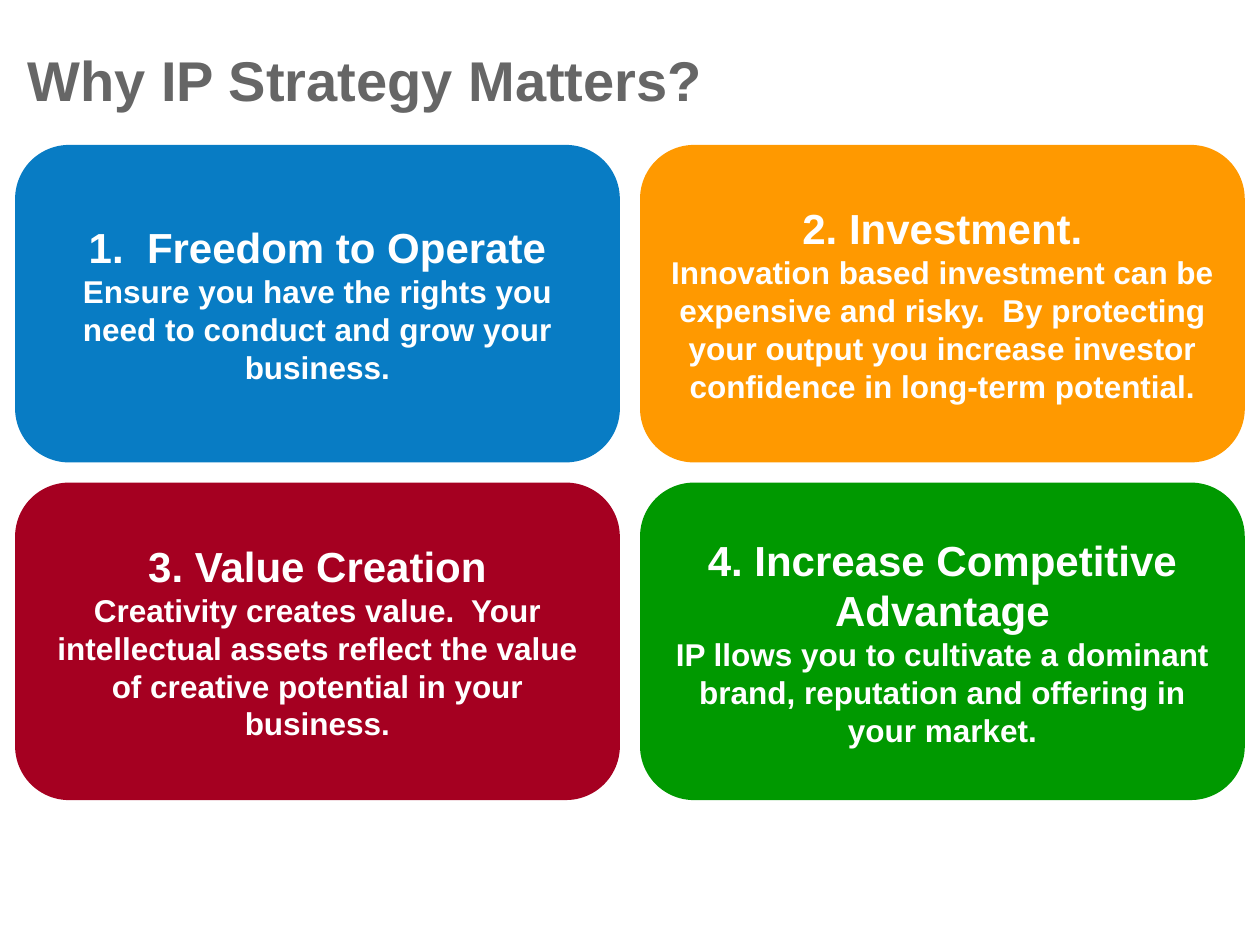
from dataclasses import dataclass

from pptx import Presentation
from pptx.dml.color import RGBColor
from pptx.enum import shapes, text
from pptx.util import Pt


@dataclass(frozen=True)
class Theme:
    face: str = "Arial"
    grey: str = "666666"
    white: str = "FFFFFF"
    blue: str = "087CC4"
    amber: str = "FF9900"
    red: str = "A50021"
    green: str = "009900"
    title: int = 32
    head: int = 24
    body: int = 18


THEME = Theme()
LEFT, TOP, WIDE, HIGH, GAP = 8.64, 82.8, 345.6, 181.44, 11.52

CARDS = [
    (THEME.blue, "1.  Freedom to Operate",
     "Ensure you have the rights you need to conduct and grow your business."),
    (THEME.amber, "2. Investment.",
     "Innovation based investment can be expensive and risky.  By protecting "
     "your output you increase investor confidence in long-term potential."),
    (THEME.red, "3. Value Creation",
     "Creativity creates value.  Your intellectual assets reflect the value "
     "of creative potential in your business."),
    (THEME.green, "4. Increase Competitive Advantage",
     "IP llows you to cultivate a dominant brand, reputation and offering in "
     "your market."),
]


def put(item, values):
    for name, value in values.items():
        setattr(item, name, value)


def write(para, words, size, color, align):
    para.alignment = align
    run = para.add_run()
    run.text = words
    put(run.font, {"name": THEME.face, "size": Pt(size), "bold": True})
    run.font.color.rgb = RGBColor.from_string(color)


def add_title(slide, words):
    title = slide.shapes.title
    put(title, {"left": Pt(LEFT), "top": Pt(0),
                "width": Pt(720 - LEFT), "height": Pt(90)})
    frame = title.text_frame
    put(frame, {"vertical_anchor": text.MSO_ANCHOR.MIDDLE, "word_wrap": True})
    write(frame.paragraphs[0], words, THEME.title, THEME.grey,
          text.PP_ALIGN.LEFT)


def add_card(slide, index, fill, head, body):
    row, col = divmod(index, 2)
    card = slide.shapes.add_shape(
        shapes.MSO_SHAPE.ROUNDED_RECTANGLE,
        Pt(LEFT + col * (WIDE + GAP)), Pt(TOP + row * (HIGH + GAP)),
        Pt(WIDE), Pt(HIGH))
    card.adjustments[0] = 0.17
    card.shadow.inherit = False
    card.fill.solid()
    card.fill.fore_color.rgb = RGBColor.from_string(fill)
    card.line.fill.background()
    frame = card.text_frame
    put(frame, {"vertical_anchor": text.MSO_ANCHOR.MIDDLE, "word_wrap": True})
    write(frame.paragraphs[0], head, THEME.head, THEME.white,
          text.PP_ALIGN.CENTER)
    write(frame.add_paragraph(), body, THEME.body, THEME.white,
          text.PP_ALIGN.CENTER)


def main():
    deck = Presentation()
    put(deck, {"slide_width": Pt(720), "slide_height": Pt(540)})
    slide = deck.slides.add_slide(deck.slide_layouts[5])
    add_title(slide, "Why IP Strategy Matters?")
    for index, card in enumerate(CARDS):
        add_card(slide, index, *card)
    deck.save("out.pptx")


if __name__ == "__main__":
    main()
